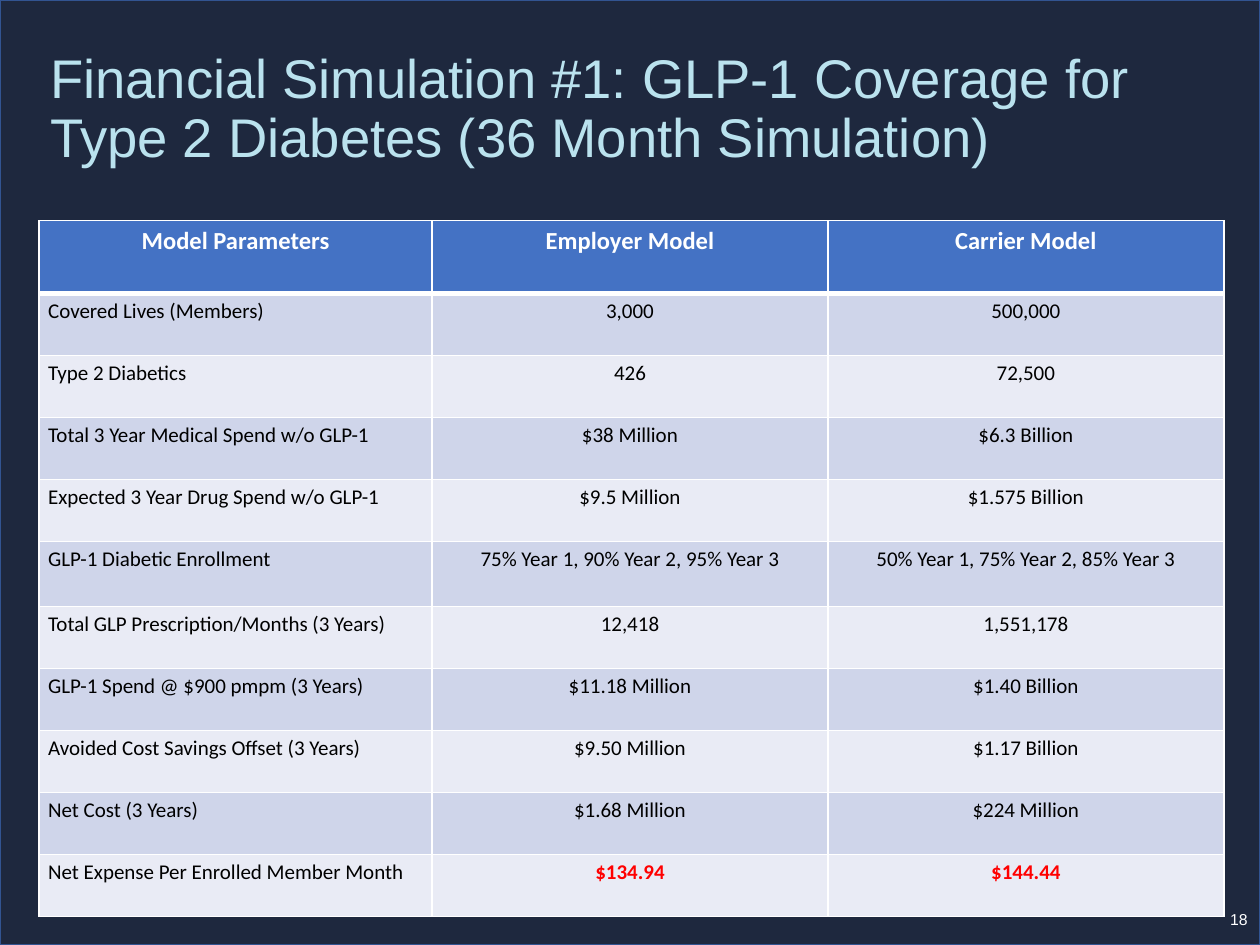
from lxml import etree
from pptx import Presentation
from pptx import util as u
from pptx.dml.color import RGBColor
from pptx.enum import shapes, text
from pptx.oxml import ns

COLORS = {
    "navy": "1E283E", "edge": "325491", "title": "BAE2EE", "header": "4472C4",
    "band": "CFD5EA", "pale": "E9EBF5", "white": "FFFFFF", "black": "000000", "red": "FF0000",
}
ROWS = [
    ("Model Parameters", "Employer Model", "Carrier Model"),
    ("Covered Lives (Members)", "3,000", "500,000"),
    ("Type 2 Diabetics", "426", "72,500"),
    ("Total 3 Year Medical Spend w/o GLP-1", "$38 Million", "$6.3 Billion"),
    ("Expected 3 Year Drug Spend w/o GLP-1", "$9.5 Million", "$1.575 Billion"),
    ("GLP-1 Diabetic Enrollment", "75% Year 1, 90% Year 2, 95% Year 3",
     "50% Year 1, 75% Year 2, 85% Year 3"),
    ("Total GLP Prescription/Months (3 Years)", "12,418", "1,551,178"),
    ("GLP-1 Spend @ $900 pmpm (3 Years)", "$11.18 Million", "$1.40 Billion"),
    ("Avoided Cost Savings Offset (3 Years)", "$9.50 Million", "$1.17 Billion"),
    ("Net Cost (3 Years)", "$1.68 Million", "$224 Million"),
    ("Net Expense Per Enrolled Member Month", "$134.94", "$144.44"),
]
COLUMN_WIDTHS = [7.92, 7.98, 7.98]
ROW_HEIGHTS = [1.47] + [1.25] * 4 + [1.31] + [1.25] * 5
CELL_MARGINS = {"margin_left": 0.18, "margin_right": 0.18, "margin_top": 0.1, "margin_bottom": 0.1}


def rgb(name):
    """Return the named colour."""
    return RGBColor.from_string(COLORS[name])


def write(tf, words, color, align, **font):
    """Write one formatted paragraph into a text frame."""
    p = tf.paragraphs[0]
    p.alignment = align
    r = p.add_run()
    r.text = words
    r.font.color.rgb = rgb(color)
    for key, value in font.items():
        setattr(r.font, key, value)
    return p


def add_borders(cell, bottom):
    """Give a cell white borders with the given bottom width in points."""
    tc_pr = cell._tc.get_or_add_tcPr()
    widths = {"lnL": 1, "lnR": 1, "lnT": 1, "lnB": bottom}
    for i, (tag, width) in enumerate(widths.items()):
        line = etree.Element(ns.qn("a:" + tag), w=str(u.Pt(width)))
        fill = etree.SubElement(line, ns.qn("a:solidFill"))
        etree.SubElement(fill, ns.qn("a:srgbClr"), val=COLORS["white"])
        tc_pr.insert(i, line)


def add_background(s, left, top, width, height):
    """Cover the box with the navy backdrop."""
    sp = s.shapes.add_shape(shapes.MSO_SHAPE.RECTANGLE, left, top, width, height)
    sp.shadow.inherit = False
    sp.fill.solid()
    sp.fill.fore_color.rgb = rgb("navy")
    sp.line.color.rgb = rgb("edge")
    sp.line.width = u.Pt(1)


def add_label(s, box, words, color, align, **font):
    """Place vertically centred, wrapped text in the box."""
    tf = s.shapes.add_textbox(*map(u.Cm, box)).text_frame
    tf.word_wrap = True
    tf.vertical_anchor = text.MSO_ANCHOR.MIDDLE
    return write(tf, words, color, align, name="Arial", **font)


def add_model_table(s, left, top):
    """Place the table comparing the two models."""
    table = s.shapes.add_table(
        len(ROWS), len(COLUMN_WIDTHS), u.Cm(left), u.Cm(top),
        u.Cm(sum(COLUMN_WIDTHS)), u.Cm(sum(ROW_HEIGHTS))).table
    for column, width in zip(table.columns, COLUMN_WIDTHS):
        column.width = u.Cm(width)
    for i, (values, height) in enumerate(zip(ROWS, ROW_HEIGHTS)):
        table.rows[i].height = u.Cm(height)
        header = i == 0
        for j, value in enumerate(values):
            cell = table.cell(i, j)
            for key, margin in CELL_MARGINS.items():
                setattr(cell, key, u.Cm(margin))
            cell.fill.solid()
            cell.fill.fore_color.rgb = rgb("header" if header else "band" if i % 2 else "pale")
            add_borders(cell, 3 if header else 1)
            result = i == len(ROWS) - 1 and j > 0
            color = "white" if header else "red" if result else "black"
            align = text.PP_ALIGN.CENTER if header or j else text.PP_ALIGN.LEFT
            write(cell.text_frame, value, color, align, name="Calibri",
                  size=u.Pt(14 if header else 12), bold=header or result)


def main():
    """Build and save the slide."""
    prs = Presentation()
    prs.slide_width, prs.slide_height = u.Cm(25.4), u.Cm(19.05)
    s = prs.slides.add_slide(prs.slide_layouts[6])
    add_background(s, 0, 0, prs.slide_width, prs.slide_height)
    title = add_label(s, (0.76, 0.84, 23.9, 2.77),
                      "Financial Simulation #1: GLP-1 Coverage for Type 2 Diabetes (36 Month Simulation)",
                      "title", text.PP_ALIGN.LEFT, size=u.Pt(31.1))
    title.line_spacing = 0.9
    add_model_table(s, 0.79, 4.45)
    add_label(s, (19.69, 18.03, 5.71, 1.02), "18", "white", text.PP_ALIGN.RIGHT, size=u.Pt(9))
    prs.save("out.pptx")


if __name__ == "__main__":
    main()
